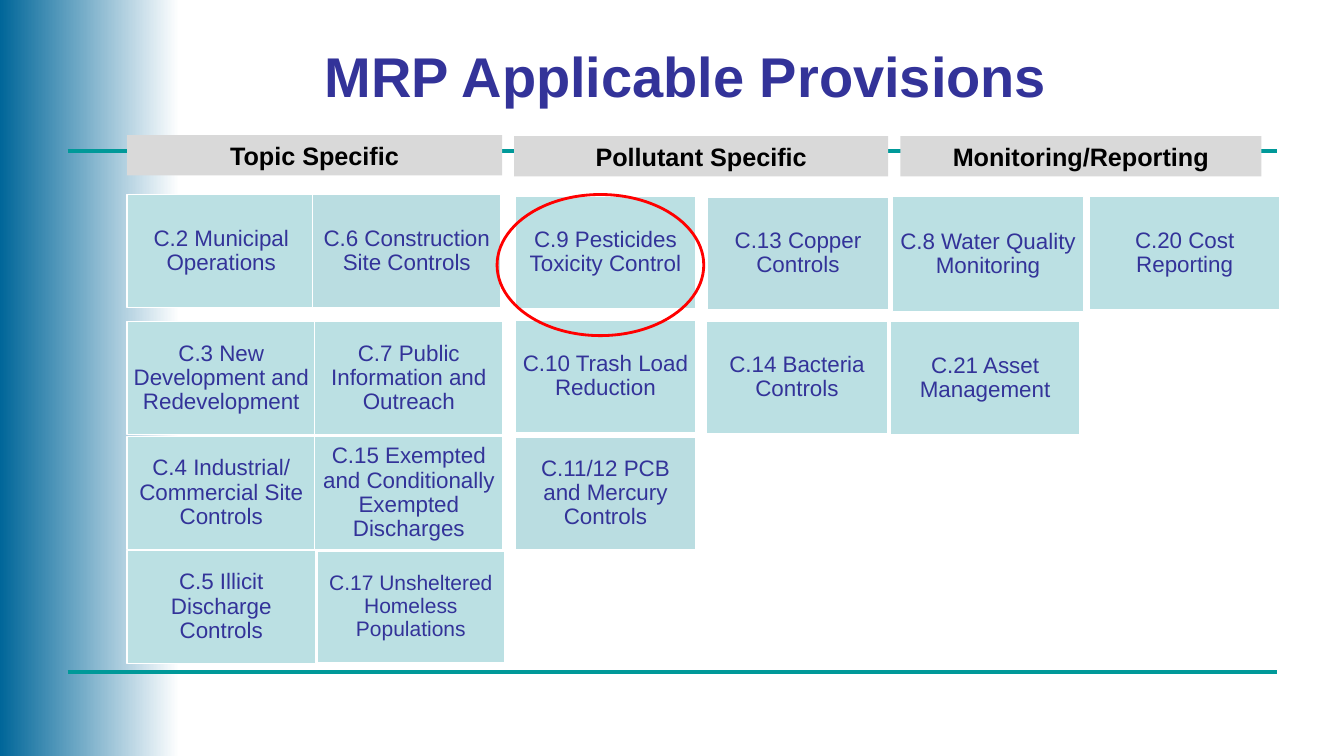
import pptx
import pptx.util
import pptx.dml.color
import pptx.enum.shapes
import pptx.enum.text
import pptx.oxml
from dataclasses import dataclass

Inches = pptx.util.Inches
Pt = pptx.util.Pt
Kind = pptx.enum.shapes.MSO_SHAPE
Align = pptx.enum.text.PP_ALIGN
Anchor = pptx.enum.text.MSO_ANCHOR


@dataclass(frozen=True)
class Theme:
    face: str = "Arial"
    ink: str = "333399"
    black: str = "000000"
    white: str = "FFFFFF"
    deep: str = "006699"
    teal: str = "009999"
    gray: str = "D9D9D9"
    pale: str = "BBE0E3"
    dusk: str = "BADDE1"
    red: str = "FF0000"
    title: int = 40
    head: int = 18
    body: int = 16
    small: int = 15


def color(code):
    return pptx.dml.color.RGBColor.from_string(code)


def apply(item, form):
    for name, value in form.items():
        setattr(item, name, value)


class Page:
    def __init__(self, deck, theme):
        self.theme = theme
        self.slide = deck.slides.add_slide(deck.slide_layouts[5])

    def label(self, shape, text, size, ink, bold=False, inset=(0.1, 0.05), space=1.0):
        frame = shape.text_frame
        wide, high = map(Inches, inset)
        apply(frame, {
            "text": text, "word_wrap": True, "vertical_anchor": Anchor.MIDDLE,
            "margin_left": wide, "margin_right": wide,
            "margin_top": high, "margin_bottom": high,
        })
        para = frame.paragraphs[0]
        apply(para, {"alignment": Align.CENTER, "line_spacing": space})
        apply(para.font, {"name": self.theme.face, "size": Pt(size), "bold": bold})
        para.font.color.rgb = color(ink)

    def title(self, text, box):
        shape = self.slide.shapes.title
        apply(shape, dict(zip(("left", "top", "width", "height"), map(Inches, box))))
        self.label(shape, text, self.theme.title, self.theme.ink, True)

    def shape(self, kind, box, fill=None, line=None, width=1):
        shape = self.slide.shapes.add_shape(kind, *map(Inches, box))
        shape.shadow.inherit = False
        if fill:
            shape.fill.solid()
            shape.fill.fore_color.rgb = color(fill)
        else:
            shape.fill.background()
        if line:
            shape.line.color.rgb = color(line)
            shape.line.width = Pt(width)
        else:
            shape.line.fill.background()
        return shape

    def fade(self, box):
        """Draw a band that runs from deep blue to white, left to right."""
        fill = self.shape(Kind.RECTANGLE, box).fill
        fill.gradient()
        fill.gradient_angle = 0
        for stop, code in zip(fill.gradient_stops, (self.theme.deep, self.theme.white)):
            stop.color.rgb = color(code)

    def rule(self, left, right, top):
        line = self.slide.shapes.add_connector(
            pptx.enum.shapes.MSO_CONNECTOR.STRAIGHT,
            *map(Inches, (left, top, right, top)))
        line.line.color.rgb = color(self.theme.teal)
        line.line.width = Pt(3)
        props = line._element.spPr
        props.append(pptx.oxml.parse_xml(
            '<a:effectLst xmlns:a="http://schemas.openxmlformats.org/drawingml/2006/main"/>'))

    def head(self, text, box):
        shape = self.shape(Kind.RECTANGLE, box, self.theme.gray)
        self.label(shape, text, self.theme.head, self.theme.black, True)

    def card(self, text, box, inset, edge=2, fill=None, size=None):
        shape = self.shape(Kind.RECTANGLE, box, fill or self.theme.pale,
                           self.theme.white, edge)
        self.label(shape, text, size or self.theme.body, self.theme.ink,
                   inset=(inset, inset), space=0.9)


THEME = Theme()
DUSK = {"fill": THEME.dusk}
THIN = {"edge": 1}

HEADS = [
    ("Topic Specific", (1.26, 1.34, 3.72, 0.4)),
    ("Pollutant Specific", (5.1, 1.35, 3.71, 0.4)),
    ("Monitoring/Reporting", (8.93, 1.35, 3.58, 0.4)),
]

# Each group: card width, height, inset, then left, top, text and format per card
GROUPS = [
    (1.87, 1.12, 0.05, [
        (1.26, 1.93, "C.2 Municipal Operations", THIN),
        (1.26, 3.19, "C.3 New Development and Redevelopment", THIN),
        (1.26, 4.33, "C.4 Industrial/ Commercial Site Controls", THIN),
        (1.26, 5.46, "C.5 Illicit Discharge Controls", THIN),
        (3.1, 1.93, "C.6 Construction Site Controls", THIN | DUSK),
        (3.12, 3.19, "C.7 Public Information and Outreach", THIN),
        (3.12, 4.33, "C.15 Exempted and Conditionally Exempted Discharges", THIN),
        (3.14, 5.46, "C.17 Unsheltered Homeless Populations", {"size": THEME.small}),
    ]),
    (1.81, 1.13, 0.07, [
        (5.1, 1.94, "C.9 Pesticides Toxicity Control", {}),
        (5.1, 3.17, "C.10 Trash Load Reduction", {}),
        (5.1, 4.33, "C.11/12 PCB and Mercury Controls", DUSK),
        (7.01, 1.95, "C.13 Copper Controls", DUSK),
        (7, 3.18, "C.14 Bacteria Controls", {}),
    ]),
    (1.9, 1.14, 0.07, [
        (8.85, 1.95, "C.8 Water Quality Monitoring", THIN),
        (10.8, 1.94, "C.20 Cost Reporting", {}),
        (8.82, 3.18, "C.21 Asset Management", {}),
    ]),
]


def main():
    deck = pptx.Presentation()
    apply(deck, {"slide_width": Inches(13.33), "slide_height": Inches(7.5)})
    page = Page(deck, THEME)
    page.fade((0, 0, 1.78, 7.5))
    for top in (1.5, 6.67):
        page.rule(0.67, 12.67, top)
    page.title("MRP Applicable Provisions", (1.09, 0.31, 11.42, 0.87))
    for wide, high, inset, cards in GROUPS:
        for left, top, text, form in cards:
            page.card(text, (left, top, wide, high), inset, **form)
    for text, box in HEADS:
        page.head(text, box)
    page.shape(Kind.OVAL, (4.93, 1.93, 2.05, 1.4), line=THEME.red, width=2)
    deck.save("out.pptx")


if __name__ == "__main__":
    main()
